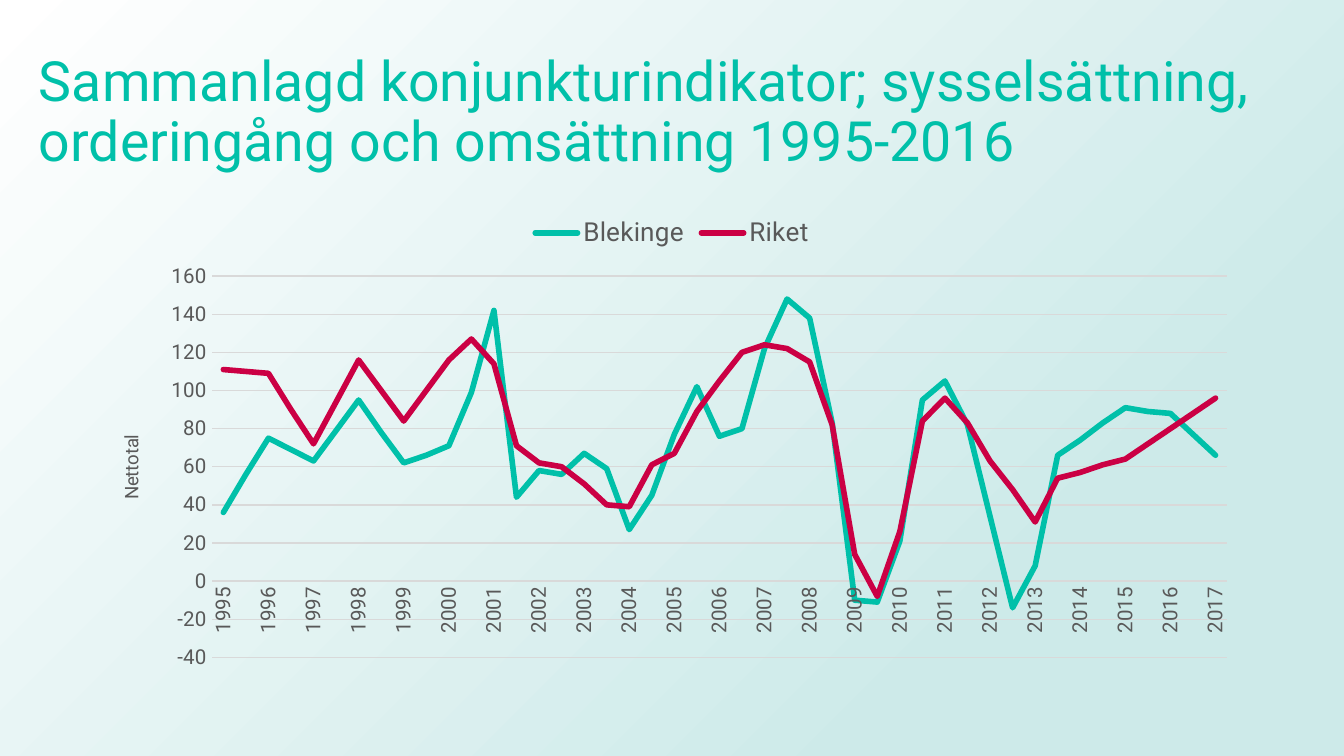
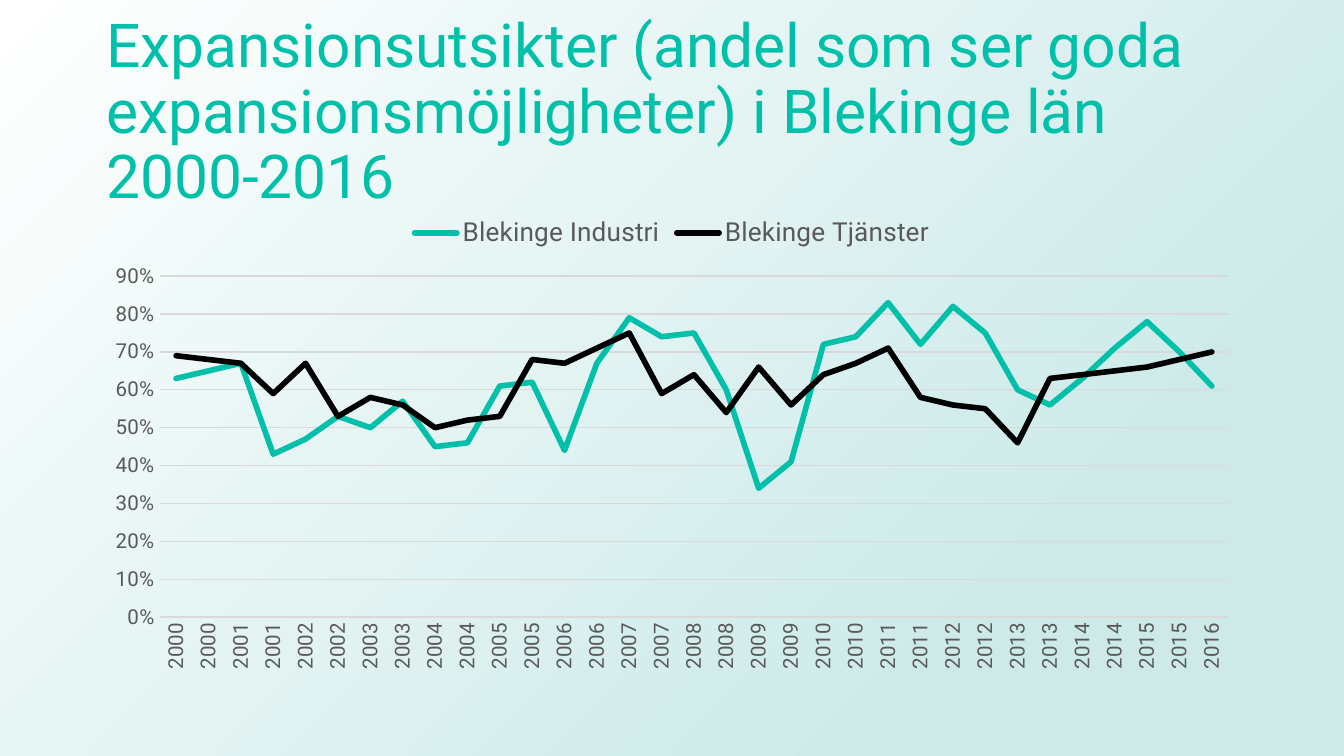
"""Build two line chart slides on the business climate in Blekinge."""
from lxml import etree
from pptx import Presentation
from pptx.chart.data import CategoryChartData
from pptx.dml.color import RGBColor
from pptx.enum.chart import XL_CHART_TYPE, XL_LEGEND_POSITION, XL_TICK_MARK
from pptx.enum.shapes import MSO_SHAPE
from pptx.enum.text import MSO_ANCHOR, MSO_AUTO_SIZE, PP_ALIGN
from pptx.oxml import parse_xml
from pptx.oxml.ns import nsdecls, qn
from pptx.util import Inches, Pt

LINE = XL_CHART_TYPE.LINE
TOP = XL_LEGEND_POSITION.TOP
NO_TICK = XL_TICK_MARK.NONE
RECT = MSO_SHAPE.RECTANGLE
MIDDLE = MSO_ANCHOR.MIDDLE
NO_FIT = MSO_AUTO_SIZE.NONE
LEFT = PP_ALIGN.LEFT

FONT = "Roboto"
TEAL, RED, BLACK = "00C0A9", "CB0044", "000000"
GRAY, GRID = "595959", "D9D9D9"
PALE, WHITE = "CDEAE9", "FFFFFF"
WIDTH = 10
HEIGHT = WIDTH * 9 / 16
CHART_BOX = (0.69, 1.5, 8.62, 3.56)

SLIDES = [
    {
        "title": "Sammanlagd konjunkturindikator; sysselsättning, "
                 "orderingång och omsättning 1995-2016",
        "box": (0.19, 0.3, 10.02, 1.09), "size": 29.7,
        "first_year": 1995, "label_step": 2,
        "scale": (-40, 160, 20), "format": "0", "axis_title": "Nettotal",
        "plot": {"x": 0.103, "y": 0.156, "w": 0.876, "h": 0.797},
        "series": [
            ("Blekinge", TEAL, [
                36, 56, 75, 69, 63, 79, 95, 78, 62, 66, 71, 99, 142, 44, 58,
                56, 67, 59, 27, 45, 77, 102, 76, 80, 122, 148, 138, 83, -10,
                -11, 21, 95, 105, 82, 34, -14, 8, 66, 74, 83, 91, 89, 88, 77,
                66]),
            ("Riket", RED, [
                111, 110, 109, 90, 72, 94, 116, 100, 84, 100, 116, 127, 114,
                71, 62, 60, 51, 40, 39, 61, 67, 89, 105, 120, 124, 122, 115,
                82, 14, -8, 26, 84, 96, 83, 63, 48, 31, 54, 57, 61, 64, 72,
                80, 88, 96]),
        ],
    },
    {
        "title": "Expansionsutsikter (andel som ser goda "
                 "expansionsmöjligheter) i Blekinge län 2000-2016",
        "box": (0.69, 0.3, 8.62, 1.09), "size": 32.4,
        "first_year": 2000, "label_step": 1,
        "scale": (0, 0.9, 0.1), "format": "0%", "axis_title": None,
        "plot": {"x": 0.058, "y": 0.156, "w": 0.922, "h": 0.713},
        "series": [
            ("Blekinge Industri", TEAL, [
                0.63, 0.65, 0.67, 0.43, 0.47, 0.53, 0.5, 0.57, 0.45, 0.46,
                0.61, 0.62, 0.44, 0.67, 0.79, 0.74, 0.75, 0.6, 0.34, 0.41,
                0.72, 0.74, 0.83, 0.72, 0.82, 0.75, 0.6, 0.56, 0.63, 0.71,
                0.78, 0.7, 0.61]),
            ("Blekinge Tjänster", BLACK, [
                0.69, 0.68, 0.67, 0.59, 0.67, 0.53, 0.58, 0.56, 0.5, 0.52,
                0.53, 0.68, 0.67, 0.71, 0.75, 0.59, 0.64, 0.54, 0.66, 0.56,
                0.64, 0.67, 0.71, 0.58, 0.56, 0.55, 0.46, 0.63, 0.64, 0.65,
                0.66, 0.68, 0.7]),
        ],
    },
]


def rgb(color):
    return RGBColor.from_string(color)


def set_font(font, size, color, name=FONT):
    font.name, font.size, font.bold = name, Pt(size), False
    font.color.rgb = rgb(color)


def set_line(line, color, width):
    line.color.rgb = rgb(color)
    line.width = Pt(width)


def add_master_gradient(prs, slide):
    sp = slide.shapes.add_shape(RECT, 0, 0, prs.slide_width, prs.slide_height)
    sp.shadow.inherit = False
    sp.line.fill.background()
    sp.fill.solid()
    solid = sp.element.spPr.find(qn("a:solidFill"))
    stops = "".join(
        f'<a:gs pos="{pos}"><a:srgbClr val="{color}"/></a:gs>'
        for pos, color in ((23000, PALE), (100000, WHITE)))
    gradient = parse_xml(
        f'<a:gradFill {nsdecls("a")} rotWithShape="1"><a:gsLst>{stops}</a:gsLst>'
        '<a:path path="circle"><a:fillToRect l="100000" t="100000"/></a:path>'
        '</a:gradFill>')
    sp.element.spPr.replace(solid, gradient)
    prs.slide_master.shapes.element.insert(2, sp.element)


def set_title(slide, item):
    sp = slide.shapes.title
    sp.left, sp.top, sp.width, sp.height = map(Inches, item["box"])
    tf = sp.text_frame
    tf.word_wrap, tf.auto_size, tf.vertical_anchor = True, NO_FIT, MIDDLE
    p = tf.paragraphs[0]
    p.alignment, p.line_spacing = LEFT, 0.9
    r = p.add_run()
    r.text = item["title"]
    set_font(r.font, item["size"], TEAL)


def set_layout(parent, sizes, inner=False):
    layout = parent.find(qn("c:layout"))
    if layout is None:
        layout = etree.Element(qn("c:layout"))
        parent.insert(0, layout)
    manual = etree.SubElement(layout, qn("c:manualLayout"))
    parts = [("layoutTarget", "inner")] if inner else []
    parts += [("xMode", "edge"), ("yMode", "edge"), *sizes.items()]
    for tag, value in parts:
        etree.SubElement(manual, qn(f"c:{tag}")).set("val", str(value))


def format_axes(chart, item):
    cat, val = chart.category_axis, chart.value_axis
    for axis in (cat, val):
        axis.major_tick_mark = axis.minor_tick_mark = NO_TICK
        set_font(axis.tick_labels.font, 11, GRAY)
    set_line(cat.format.line, GRID, 0.75)
    body = chart.element.find(
        f'.//{qn("c:catAx")}/{qn("c:txPr")}/{qn("a:bodyPr")}')
    body.set("rot", "-5400000")
    body.set("vert", "horz")
    skip = etree.Element(qn("c:tickLblSkip"))
    skip.set("val", str(item["label_step"]))
    chart.element.find(f'.//{qn("c:noMultiLvlLbl")}').addprevious(skip)

    val.minimum_scale, val.maximum_scale, val.major_unit = item["scale"]
    val.tick_labels.number_format = item["format"]
    val.tick_labels.number_format_is_linked = False
    val.format.line.fill.background()
    val.has_major_gridlines = True
    set_line(val.major_gridlines.format.line, GRID, 0.75)
    if item["axis_title"]:
        r = val.axis_title.text_frame.paragraphs[0].add_run()
        r.text = item["axis_title"]
        set_font(r.font, 10, GRAY)
        title = chart.element.find(f'.//{qn("c:valAx")}/{qn("c:title")}')
        set_layout(title, {"x": 0.02, "y": 0.48})


def add_line_chart(slide, item):
    data = CategoryChartData(number_format=item["format"])
    count = len(item["series"][0][2])
    data.categories = [str(item["first_year"] + i // 2) for i in range(count)]
    for name, _, values in item["series"]:
        data.add_series(name, values)
    chart = slide.shapes.add_chart(LINE, *map(Inches, CHART_BOX), data).chart
    set_font(chart.font, 10, BLACK, "Calibri")
    chart.has_title = False
    chart.has_legend = True
    chart.legend.position = TOP
    chart.legend.include_in_layout = False
    set_font(chart.legend.font, 14, GRAY)
    plot = chart.plots[0]
    plot.vary_by_categories = False
    for series, (_, color, _) in zip(plot.series, item["series"]):
        series.smooth = False
        set_line(series.format.line, color, 3)
    for line in chart.element.iter(qn("a:ln")):
        line.set("cap", "rnd")
    format_axes(chart, item)
    set_layout(chart.element.find(f'.//{qn("c:plotArea")}'), item["plot"], True)


def main():
    prs = Presentation()
    prs.slide_width, prs.slide_height = Inches(WIDTH), Inches(HEIGHT)
    for i, item in enumerate(SLIDES):
        slide = prs.slides.add_slide(prs.slide_layouts[5])
        if i == 0:
            add_master_gradient(prs, slide)
        set_title(slide, item)
        add_line_chart(slide, item)
    prs.save("out.pptx")


if __name__ == "__main__":
    main()
